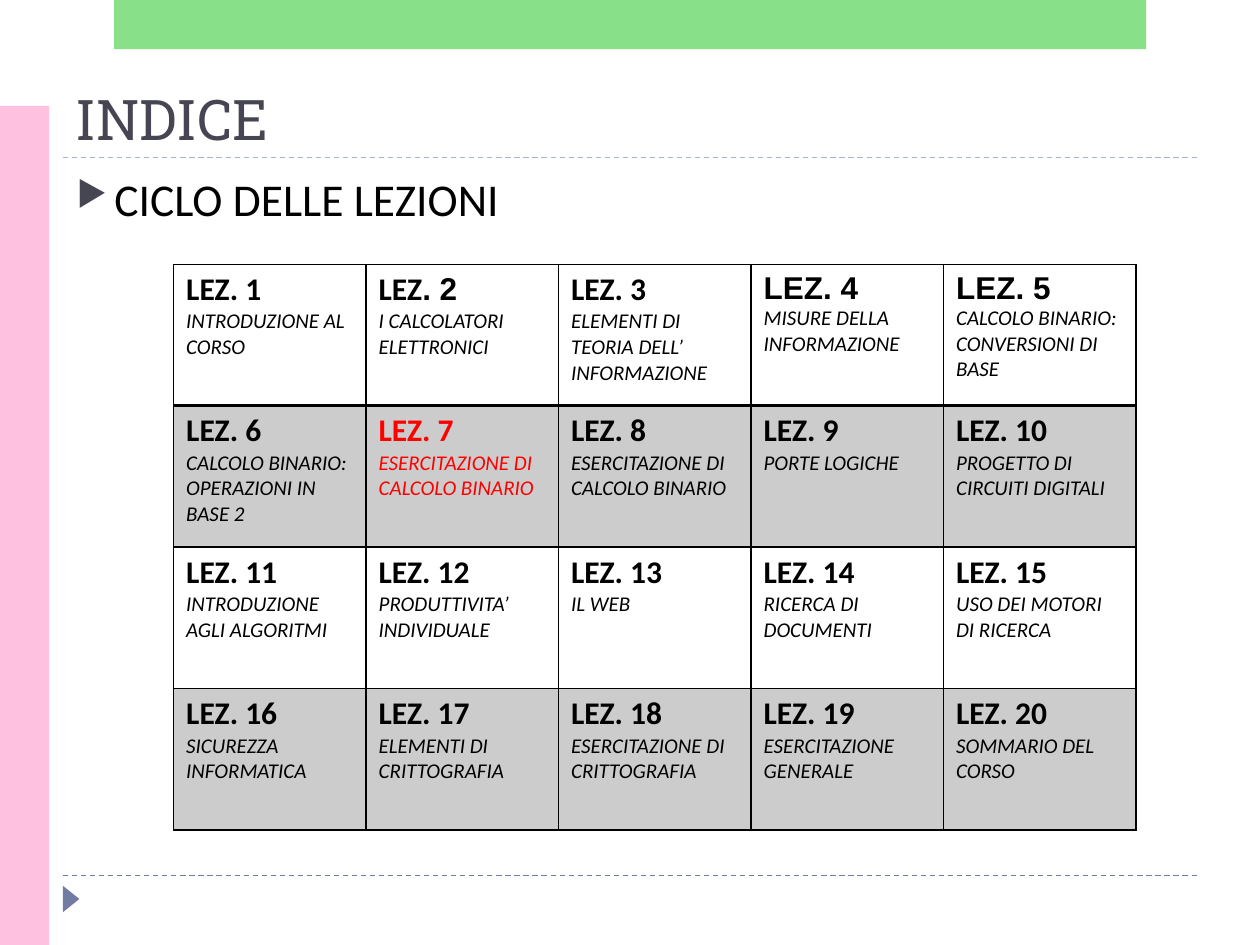
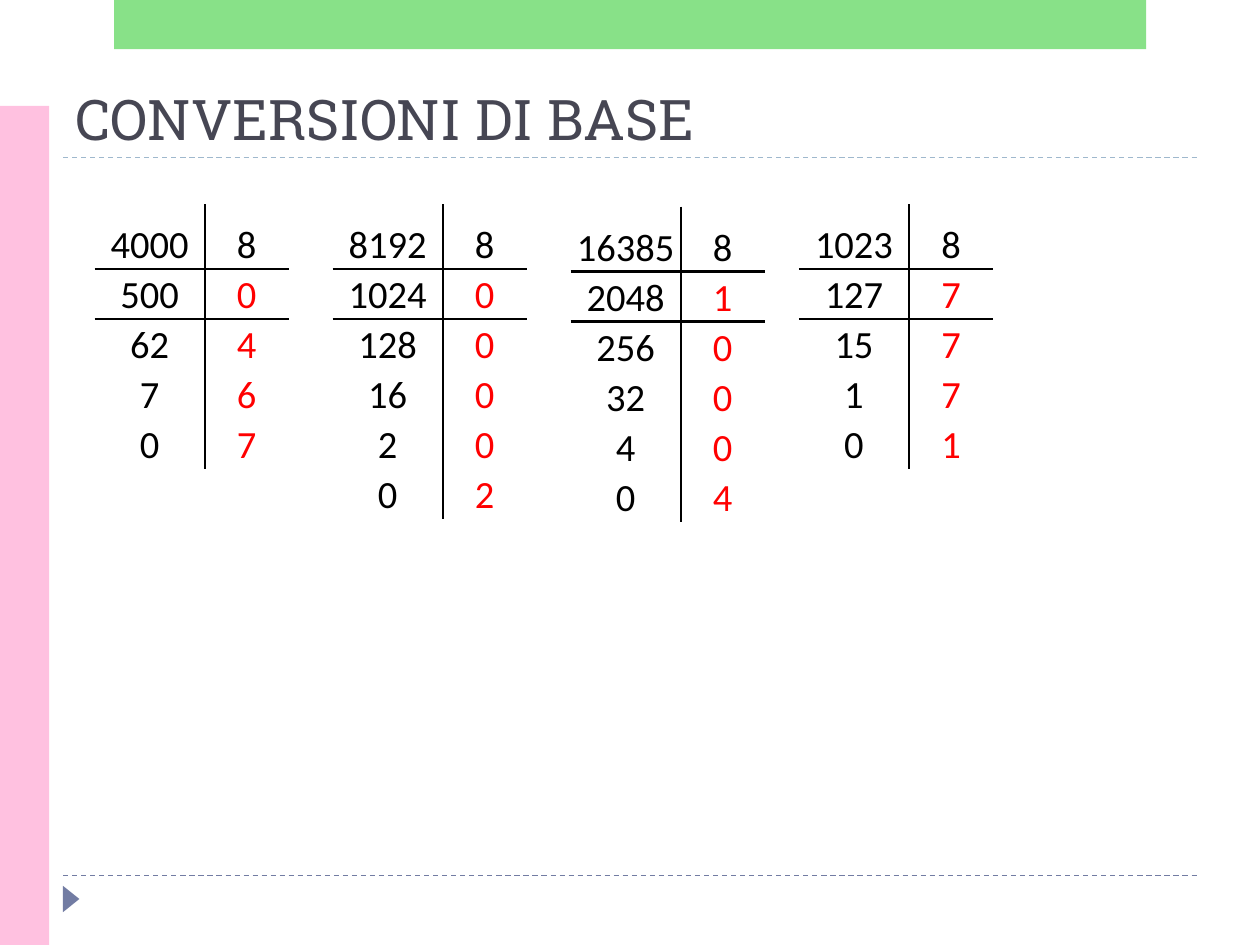
from lxml import etree
from pptx import Presentation
from pptx.dml.color import RGBColor
from pptx.enum.dml import MSO_LINE
from pptx.enum.shapes import MSO_CONNECTOR, MSO_SHAPE
from pptx.enum.text import MSO_ANCHOR, PP_ALIGN
from pptx.oxml.ns import qn
from pptx.util import Pt

COLORS = {
    "text": "000000",
    "title": "464653",
    "highlight": "FF0000",
    "footer": "727CA3",
    "title_rule": "9FB8CD",
    "side_band": "FFC1E0",
    "top_band": "88E188",
    "shaded_row": "CCCCCC",
}
TITLE_FONT = "Roboto Slab"
BODY_FONT = "Calibri"
ALTERNATE_FONT = "Arial"
NO_TABLE_STYLE = "{2D5ABB26-0587-4C30-8999-92F81FD0307C}"

LESSONS = [
    "INTRODUZIONE AL CORSO",
    "I CALCOLATORI\vELETTRONICI",
    "ELEMENTI DI TEORIA DELL’\vINFORMAZIONE",
    "MISURE DELLA INFORMAZIONE",
    "CALCOLO BINARIO: CONVERSIONI DI BASE",
    "CALCOLO BINARIO: OPERAZIONI IN BASE 2",
    "ESERCITAZIONE DI CALCOLO BINARIO",
    "ESERCITAZIONE DI CALCOLO BINARIO",
    "PORTE LOGICHE",
    "PROGETTO DI CIRCUITI DIGITALI",
    "INTRODUZIONE AGLI ALGORITMI",
    "PRODUTTIVITA’ INDIVIDUALE",
    "IL WEB",
    "RICERCA DI DOCUMENTI",
    "USO DEI MOTORI DI RICERCA",
    "SICUREZZA INFORMATICA",
    "ELEMENTI DI CRITTOGRAFIA",
    "ESERCITAZIONE DI CRITTOGRAFIA",
    "ESERCITAZIONE GENERALE",
    "SOMMARIO DEL CORSO",
]
LESSONS_PER_ROW = 5
CURRENT_LESSON = 7
ALTERNATE_FONT_ENDINGS = {2: ". 2", 4: "LEZ. 4", 5: "LEZ. 5"}

BASE = 8
CONVERSIONS = [(4000, 54, 116.6), (8192, 190, 116.6), (16385, 326, 118), (1023, 456.5, 116.6)]


def rgb(name):
    return RGBColor.from_string(COLORS[name])


def style_font(font, size, color="text", name=BODY_FONT, bold=False, italic=False):
    font.size = Pt(size)
    font.name = name
    font.bold = bold
    font.italic = italic
    font.color.rgb = rgb(color)


def add_filled_shape(slide, kind, left, top, width, height, color):
    shape = slide.shapes.add_shape(kind, Pt(left), Pt(top), Pt(width), Pt(height))
    shape.shadow.inherit = False
    shape.fill.solid()
    shape.fill.fore_color.rgb = rgb(color)
    shape.line.fill.background()
    return shape


def add_dashed_rule(slide, top, color):
    rule = slide.shapes.add_connector(MSO_CONNECTOR.STRAIGHT, Pt(36), Pt(top), Pt(684), Pt(top))
    rule.line.color.rgb = rgb(color)
    rule.line.width = Pt(0.75)
    rule.line.dash_style = MSO_LINE.DASH
    etree.SubElement(rule._element.spPr, qn("a:effectLst"))


def add_text(slide, text, left, top, width, height, anchor):
    box = slide.shapes.add_textbox(Pt(left), Pt(top), Pt(width), Pt(height))
    box.text_frame.word_wrap = True
    box.text_frame.vertical_anchor = anchor
    box.text_frame.text = text
    return box.text_frame.paragraphs[0]


def add_base_slide(presentation, title):
    slide = presentation.slides.add_slide(presentation.slide_layouts[6])
    add_dashed_rule(slide, 500.4, "footer")
    add_dashed_rule(slide, 90, "title_rule")
    marker = add_filled_shape(slide, MSO_SHAPE.ISOSCELES_TRIANGLE, 33.1, 509, 15.1, 9.4, "footer")
    marker.rotation = 90
    add_filled_shape(slide, MSO_SHAPE.RECTANGLE, 0, 60.5, 28.1, 479.5, "side_band")
    add_filled_shape(slide, MSO_SHAPE.RECTANGLE, 65.2, 0, 589.7, 28.1, "top_band")
    paragraph = add_text(slide, title, 36, 39.6, 648, 50.4, MSO_ANCHOR.BOTTOM)
    style_font(paragraph.runs[0].font, 32, "title", TITLE_FONT)
    return slide


def add_bullet_line(slide, text):
    paragraph = add_text(slide, text, 36.7, 94.3, 648, 56.9, MSO_ANCHOR.TOP)
    properties = paragraph._p.get_or_add_pPr()
    properties.set("marL", str(Pt(21.6)))
    properties.set("indent", str(-Pt(21.6)))
    bullet_color = etree.SubElement(properties, qn("a:buClr"))
    etree.SubElement(bullet_color, qn("a:srgbClr"), val=COLORS["title"])
    etree.SubElement(properties, qn("a:buSzPct"), val="76000")
    etree.SubElement(properties, qn("a:buChar"), char="▶")
    style_font(paragraph.runs[0].font, 26)


def add_plain_table(slide, left, top, column_widths, row_heights):
    frame = slide.shapes.add_table(
        len(row_heights), len(column_widths), Pt(left), Pt(top),
        Pt(sum(column_widths)), Pt(sum(row_heights)))
    table = frame.table
    table.first_row = False
    table.horz_banding = False
    table._tbl.tblPr.find(qn("a:tableStyleId")).text = NO_TABLE_STYLE
    for column, width in zip(table.columns, column_widths):
        column.width = Pt(width)
    for row, height in zip(table.rows, row_heights):
        row.height = Pt(height)
    return table


def set_borders(cell, **widths):
    properties = cell._tc.get_or_add_tcPr()
    for side in "LRTB":
        if side in widths:
            line = etree.SubElement(properties, qn(f"a:ln{side}"), w=str(Pt(widths[side])))
            fill = etree.SubElement(line, qn("a:solidFill"))
            etree.SubElement(fill, qn("a:srgbClr"), val=COLORS["text"])


def fill_lesson_cell(cell, number, topic):
    color = "highlight" if number == CURRENT_LESSON else "text"
    heading = cell.text_frame.paragraphs[0]
    ending = ALTERNATE_FONT_ENDINGS.get(number, "")
    beginning = f"LEZ. {number}".removesuffix(ending)
    for text, font_name in ((beginning, BODY_FONT), (ending, ALTERNATE_FONT)):
        if text:
            run = heading.add_run()
            run.text = text
            style_font(run.font, 18, color, font_name, bold=True)
    description = cell.text_frame.add_paragraph()
    description.text = topic
    for run in description.runs:
        style_font(run.font, 12, color, italic=True)


def add_lesson_table(slide):
    row_count = len(LESSONS) // LESSONS_PER_ROW
    table = add_plain_table(slide, 99.2, 151, [110] * LESSONS_PER_ROW, [80.8] * row_count)
    for index, topic in enumerate(LESSONS):
        row, column = divmod(index, LESSONS_PER_ROW)
        cell = table.cell(row, column)
        set_borders(cell, L=1, R=1, T=2 if row == 1 else 1, B=2 if row == 0 else 1)
        if row % 2:
            cell.fill.solid()
            cell.fill.fore_color.rgb = rgb("shaded_row")
        else:
            cell.fill.background()
        fill_lesson_cell(cell, index + 1, topic)


def division_steps(number):
    steps = [(number, BASE)]
    while number:
        number, remainder = divmod(number, BASE)
        steps.append((number, remainder))
    return steps


def add_division_table(slide, number, left, top):
    steps = division_steps(number)
    table = add_plain_table(slide, left, top, [63, 48], [37.2] + [28.6] * (len(steps) - 1))
    for row, step in enumerate(steps):
        for column, value in enumerate(step):
            cell = table.cell(row, column)
            borders = {"L" if column else "R": 1.5}
            if row < 2:
                borders["T" if row else "B"] = 1.5
            set_borders(cell, **borders)
            cell.fill.background()
            cell.margin_left = cell.margin_right = cell.margin_top = Pt(0.75)
            cell.margin_bottom = Pt(0)
            cell.vertical_anchor = MSO_ANCHOR.BOTTOM
            paragraph = cell.text_frame.paragraphs[0]
            paragraph.text = str(value)
            paragraph.alignment = PP_ALIGN.CENTER
            style_font(paragraph.runs[0].font, 22, "highlight" if row and column else "text")


def main():
    presentation = Presentation()
    presentation.slide_width = Pt(720)
    presentation.slide_height = Pt(540)

    index_slide = add_base_slide(presentation, "INDICE")
    add_bullet_line(index_slide, "CICLO DELLE LEZIONI")
    add_lesson_table(index_slide)

    conversion_slide = add_base_slide(presentation, "CONVERSIONI DI BASE")
    for number, left, top in CONVERSIONS:
        add_division_table(conversion_slide, number, left, top)

    presentation.save("out.pptx")


if __name__ == "__main__":
    main()
